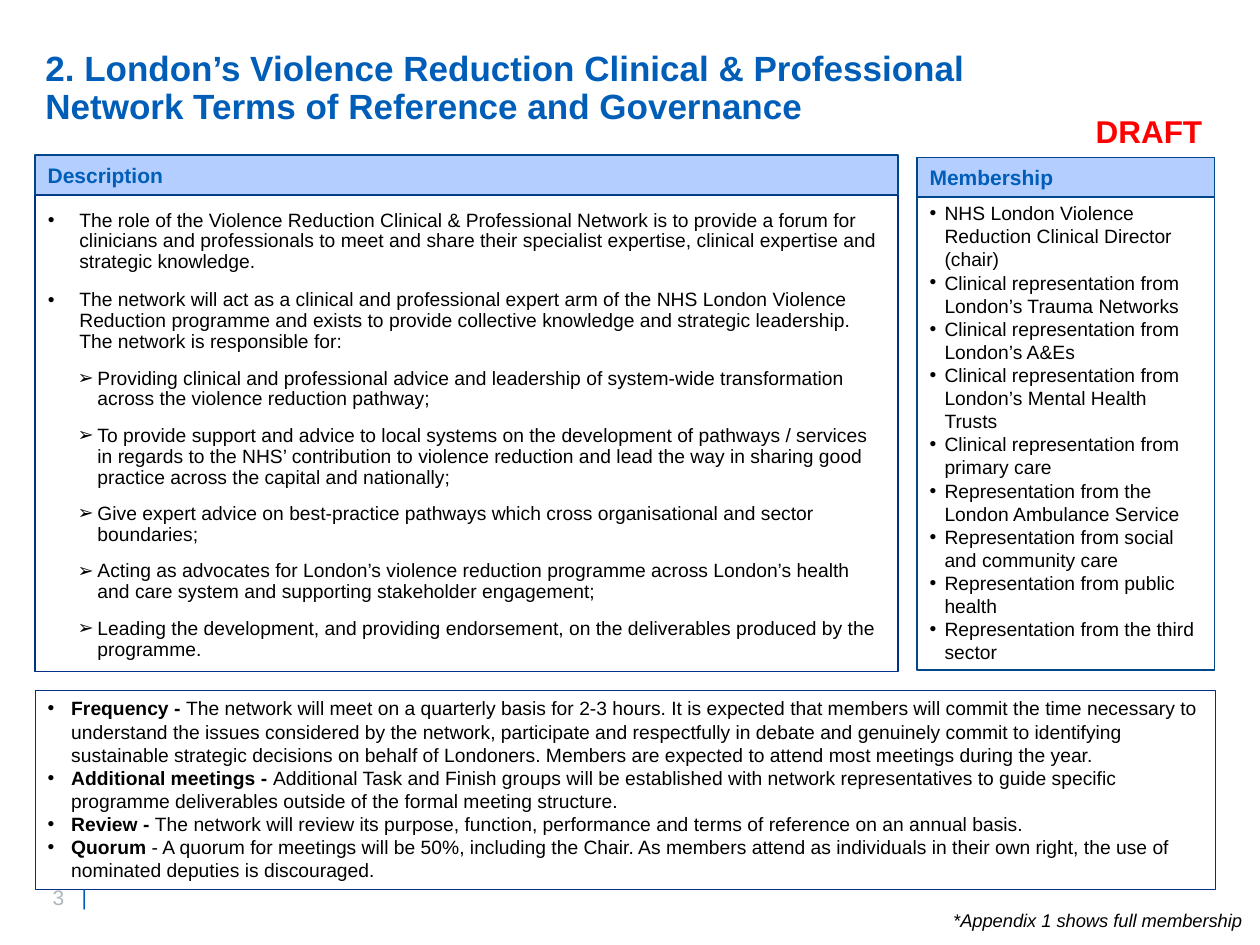
from dataclasses import dataclass

from lxml import etree
from pptx import Presentation
from pptx.dml.color import RGBColor
from pptx.enum.shapes import MSO_SHAPE
from pptx.enum.text import MSO_ANCHOR, MSO_AUTO_SIZE, PP_ALIGN
from pptx.oxml.ns import qn
from pptx.util import Pt

RECTANGLE = MSO_SHAPE.RECTANGLE
TOP, MIDDLE = MSO_ANCHOR.TOP, MSO_ANCHOR.MIDDLE
LEFT, RIGHT = PP_ALIGN.LEFT, PP_ALIGN.RIGHT
NO_AUTOFIT = MSO_AUTO_SIZE.NONE


@dataclass(frozen=True)
class Theme:
    font: str = "Arial"
    blue: RGBColor = RGBColor(0x00, 0x5E, 0xB8)
    navy: RGBColor = RGBColor(0x00, 0x30, 0x87)
    border: RGBColor = RGBColor(0x00, 0x46, 0x88)
    header: RGBColor = RGBColor(0xB4, 0xCF, 0xFF)
    black: RGBColor = RGBColor(0, 0, 0)
    red: RGBColor = RGBColor(0xFF, 0, 0)
    grey: RGBColor = RGBColor(0xAD, 0xB6, 0xBE)
    title_size: float = 20
    draft_size: float = 18
    header_size: float = 12
    body_size: float = 11
    note_size: float = 10.5


theme = Theme()


def set_font(paragraph, size, color, bold=False, italic=False):
    font = paragraph.font
    font.name, font.size = theme.font, Pt(size)
    font.bold, font.italic = bold, italic
    font.color.rgb = color


def set_bullet(paragraph, character, margin, hanging):
    properties = paragraph._p.get_or_add_pPr()
    properties.set("marL", str(Pt(margin)))
    properties.set("indent", str(-Pt(hanging)))
    etree.SubElement(properties, qn("a:buFont")).set("typeface", theme.font)
    etree.SubElement(properties, qn("a:buChar")).set("char", character)


presentation = Presentation()
presentation.slide_width, presentation.slide_height = Pt(720), Pt(540)
slide = presentation.slides.add_slide(presentation.slide_layouts[1])
shapes = slide.shapes

# Title
title, body = shapes.title, slide.placeholders[1]
title.left, title.top, title.width, title.height = Pt(18.72), Pt(25.92), Pt(573.84), Pt(48.24)
frame = title.text_frame
frame.text = (
    "2. London’s Violence Reduction Clinical & Professional "
    "Network Terms of Reference and Governance"
)
frame.auto_size, frame.vertical_anchor, frame.word_wrap = NO_AUTOFIT, TOP, True
paragraph = frame.paragraphs[0]
paragraph.alignment, paragraph.line_spacing = LEFT, 0.9
set_font(paragraph, theme.title_size, theme.blue, bold=True)

# Description list: (level, text)
description = [
    (0, "The role of the Violence Reduction Clinical & Professional Network is to provide a forum for clinicians and professionals to meet and share their specialist expertise, clinical expertise and strategic knowledge."),
    (0, "The network will act as a clinical and professional expert arm of the NHS London Violence Reduction programme and exists to provide collective knowledge and strategic leadership. The network is responsible for:"),
    (1, "Providing clinical and professional advice and leadership of system-wide transformation across the violence reduction pathway;"),
    (1, "To provide support and advice to local systems on the development of pathways / services in regards to the NHS’ contribution to violence reduction and lead the way in sharing good practice across the capital and nationally;"),
    (1, "Give expert advice on best-practice pathways which cross organisational and sector boundaries;"),
    (1, "Acting as advocates for London’s violence reduction programme across London’s health and care system and supporting stakeholder engagement;"),
    (1, "Leading the development, and providing endorsement, on the deliverables produced by the programme."),
]
level_bullets = [("•", 18, 18), ("➢", 28.35, 11.35)]
level_space_before = [10, 6]
body.left, body.top, body.width, body.height = Pt(20.16), Pt(116.64), Pt(493.2), Pt(176.4)
frame = body.text_frame
frame.auto_size, frame.vertical_anchor, frame.word_wrap = NO_AUTOFIT, TOP, True
frame.text = "\n".join(text for level, text in description)
for index, (paragraph, (level, text)) in enumerate(zip(frame.paragraphs, description)):
    paragraph.level = level
    set_bullet(paragraph, *level_bullets[level])
    paragraph.line_spacing = 0.9
    paragraph.space_before = Pt(level_space_before[level] if index else 0)
    paragraph.space_after = Pt(3 if index else 0)
    set_font(paragraph, theme.body_size, theme.black)

# Outlined panels and headers: left, top, width, height, fill, line, weight, heading
panels = [
    (20.16, 111.6, 493.2, 272.16, None, theme.navy, 1, ""),
    (524.16, 90, 169.92, 293.04, None, theme.border, 1, ""),
    (20.16, 88.56, 493.2, 22.68, theme.header, theme.border, 1, "Description"),
    (524.16, 90, 169.92, 22.68, theme.header, theme.border, 1, "Membership"),
    (20.16, 394.56, 674.64, 113.76, None, theme.navy, 0.75, ""),
]
for left, top, width, height, fill, line, weight, heading in panels:
    panel = shapes.add_shape(RECTANGLE, Pt(left), Pt(top), Pt(width), Pt(height))
    panel.shadow.inherit = False
    panel.line.color.rgb, panel.line.width = line, Pt(weight)
    if fill is None:
        panel.fill.background()
    else:
        panel.fill.solid()
        panel.fill.fore_color.rgb = fill
    if heading:
        panel.text_frame.text = heading
        panel.text_frame.vertical_anchor = MIDDLE
        paragraph = panel.text_frame.paragraphs[0]
        paragraph.alignment = LEFT
        set_font(paragraph, theme.header_size, theme.blue, bold=True)

# Membership list
members = [
    "NHS London Violence Reduction Clinical Director (chair)",
    "Clinical representation from London’s Trauma Networks",
    "Clinical representation from London’s A&Es",
    "Clinical representation from London’s Mental Health Trusts",
    "Clinical representation from primary care",
    "Representation from the London Ambulance Service",
    "Representation from social and community care",
    "Representation from public health",
    "Representation from the third sector",
]
frame = shapes.add_textbox(Pt(524.16), Pt(111.6), Pt(169.92), Pt(273.6)).text_frame
frame.word_wrap = True
frame.text = "\n".join(members)
for paragraph in frame.paragraphs:
    set_bullet(paragraph, "•", 8.5, 8.5)
    set_font(paragraph, theme.body_size, theme.black)

# Meeting rules, inside the last panel
rules = [
    ("Frequency - ", "The network will meet on a quarterly basis for 2-3 hours. It is expected that members will commit the time necessary to understand the issues considered by the network, participate and respectfully in debate and genuinely commit to identifying sustainable strategic decisions on behalf of Londoners. Members are expected to attend most meetings during the year."),
    ("Additional meetings - ", "Additional Task and Finish groups will be established with network representatives to guide specific programme deliverables outside of the formal meeting structure."),
    ("Review - ", "The network will review its purpose, function, performance and terms of reference on an annual basis."),
    ("Quorum ", "- A quorum for meetings will be 50%, including the Chair. As members attend as individuals in their own right, the use of nominated deputies is discouraged."),
]
frame = panel.text_frame
frame.word_wrap, frame.vertical_anchor = True, TOP
for index, (label, text) in enumerate(rules):
    paragraph = frame.add_paragraph() if index else frame.paragraphs[0]
    paragraph.alignment = LEFT
    set_bullet(paragraph, "•", 13.5, 13.5)
    set_font(paragraph, theme.body_size, theme.black)
    run = paragraph.add_run()
    run.text, run.font.bold = label, True
    paragraph.add_run().text = text

# Draft mark and footnote
notes = [
    (60.48, 215.28, 28.8, "DRAFT", theme.draft_size, theme.red, True, False),
    (516.24, 238.32, 20.88, "*Appendix 1 shows full membership", theme.note_size, theme.black, False, True),
]
for top, width, height, text, size, color, bold, italic in notes:
    frame = shapes.add_textbox(Pt(478.8), Pt(top), Pt(width), Pt(height)).text_frame
    frame.word_wrap = True
    frame.text = text
    paragraph = frame.paragraphs[0]
    paragraph.alignment = RIGHT
    set_font(paragraph, size, color, bold, italic)

# Page number and bar, parted by a tab stop
frame = shapes.add_textbox(Pt(23.04), Pt(501.84), Pt(51.12), Pt(21.6)).text_frame
frame.word_wrap = True
paragraph = frame.paragraphs[0]
tabs = etree.SubElement(paragraph._p.get_or_add_pPr(), qn("a:tabLst"))
etree.SubElement(tabs, qn("a:tab"), pos=str(Pt(16.5)), algn="l")
set_font(paragraph, theme.header_size, theme.grey)
paragraph.add_run().text = "3\t"
bar = paragraph.add_run()
bar.text, bar.font.color.rgb = "|", theme.blue

presentation.save("out.pptx")
